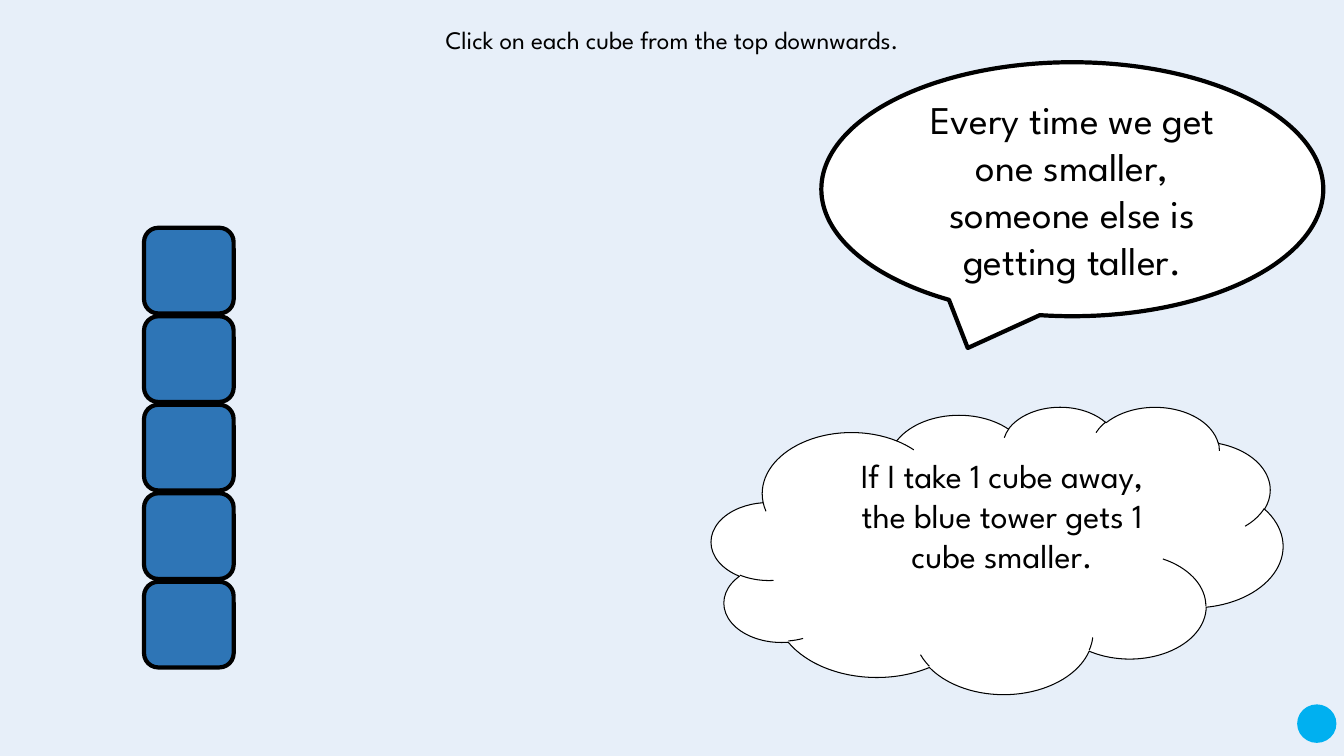
"""Build a slide about a tower of cubes that gets one smaller each time."""
import pptx
import pptx.util
import pptx.dml.color
import pptx.enum.shapes
import pptx.enum.text

Cm, Pt = pptx.util.Cm, pptx.util.Pt
MSO = pptx.enum.shapes.MSO_SHAPE
ANCHOR = pptx.enum.text.MSO_ANCHOR

INSTRUCTION = "Click on each cube from the top downwards."
SPEECH = "Every time we get one smaller, someone else is getting taller."
THOUGHT = "If I take 1 cube away, the blue tower gets 1\vcube smaller."

THEME = {
    "font": "League Spartan",
    "background": "E7EFF9",
    "ink": "000000",
    "paper": "FFFFFF",
    "cube": "2E75B6",
    "dot": "00B0F0",
    "instruction": 18,
    "thought": 24,
    "speech": 28,
    "thin": 0.75,
    "thick": 3,
}

CUBES = 5
CUBE_LEFT, CUBE_TOP = 3.63, 5.74
CUBE_WIDTH, CUBE_HEIGHT, CUBE_GAP = 2.26, 2.16, 0.07
CLOUD_BOX = (17.93, 10.24, 14.4, 7.24)
SPEECH_BOX = (20.7, 1.57, 12.65, 6.4)
DOT_BOX = (32.69, 17.75, 0.99, 0.97)
INSTRUCTION_BOX = (7.44, 0.48, 19, 1.02)


def color(name):
    return pptx.dml.color.RGBColor.from_string(THEME[name])


def add_figure(s, kind, box, fill, line=None):
    sp = s.shapes.add_shape(kind, *map(Cm, box))
    sp.shadow.inherit = False
    sp.fill.solid()
    sp.fill.fore_color.rgb = color(fill)
    if line:
        sp.line.color.rgb = color("ink")
        sp.line.width = Pt(THEME[line])
    else:
        sp.line.fill.background()
    return sp


def write(sp, text, size, anchor):
    tf = sp.text_frame
    tf.word_wrap = True
    tf.vertical_anchor = anchor
    p = tf.paragraphs[0]
    p.text = text
    p.alignment = pptx.enum.text.PP_ALIGN.CENTER
    for r in p.runs:
        r.font.name = THEME["font"]
        r.font.size = Pt(THEME[size])
        r.font.color.rgb = color("ink")
    return p


def main():
    prs = pptx.Presentation()
    prs.slide_width, prs.slide_height = Cm(33.87), Cm(19.05)
    s = prs.slides.add_slide(prs.slide_layouts[6])
    s.background.fill.solid()
    s.background.fill.fore_color.rgb = color("background")

    cloud = add_figure(s, MSO.CLOUD, CLOUD_BOX, "paper", "thin")
    p = write(cloud, THOUGHT, "thought", ANCHOR.TOP)
    pPr = p._p.get_or_add_pPr()
    pPr.set("marL", str(Cm(1.27)))
    pPr.set("indent", "0")

    for i in reversed(range(CUBES)):
        top = CUBE_TOP + i * (CUBE_HEIGHT + CUBE_GAP)
        box = (CUBE_LEFT, top, CUBE_WIDTH, CUBE_HEIGHT)
        add_figure(s, MSO.ROUNDED_RECTANGLE, box, "cube", "thick")

    speech = add_figure(s, MSO.OVAL_CALLOUT, SPEECH_BOX, "paper", "thick")
    write(speech, SPEECH, "speech", ANCHOR.MIDDLE)

    add_figure(s, MSO.OVAL, DOT_BOX, "dot")

    instruction = s.shapes.add_textbox(*map(Cm, INSTRUCTION_BOX))
    write(instruction, INSTRUCTION, "instruction", ANCHOR.TOP)

    prs.save("out.pptx")


if __name__ == "__main__":
    main()
